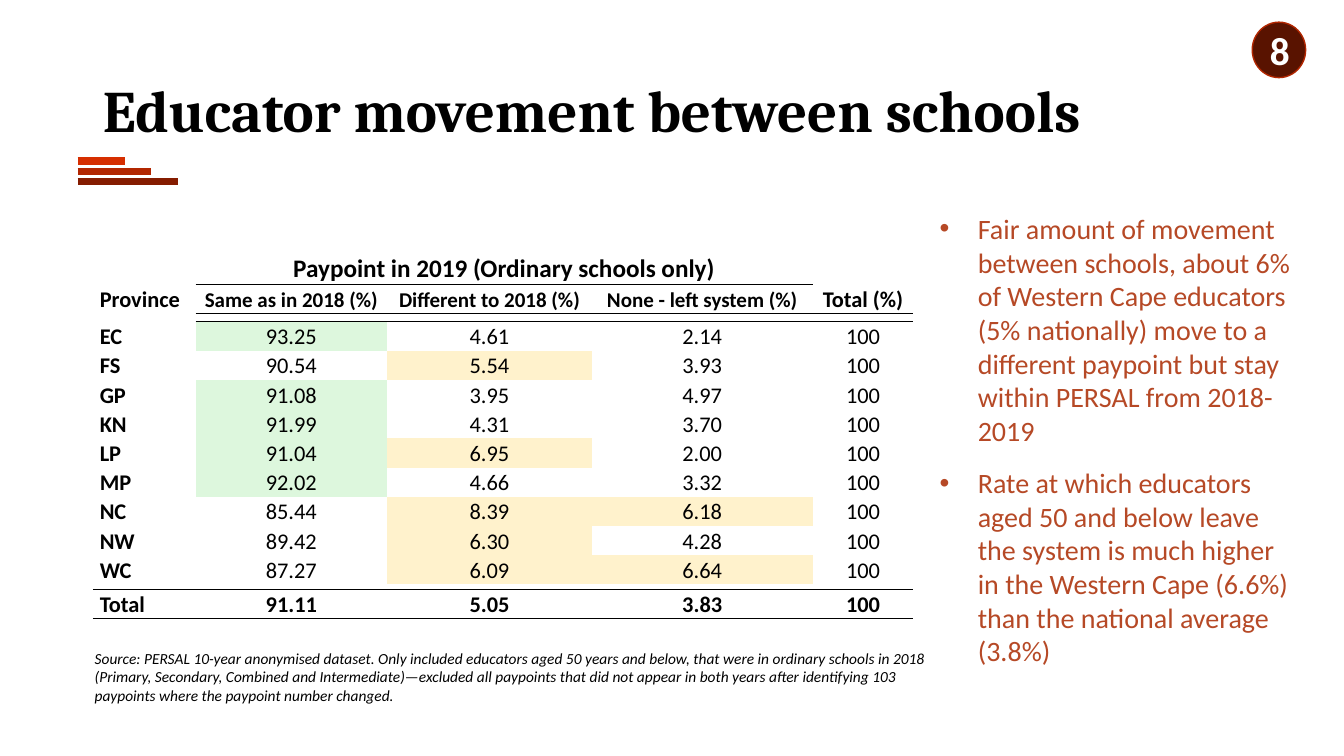
from dataclasses import dataclass

from lxml.etree import SubElement
from pptx import Presentation
from pptx.dml.color import RGBColor
from pptx.enum.shapes import MSO_CONNECTOR, MSO_SHAPE
from pptx.enum.text import MSO_ANCHOR, PP_ALIGN
from pptx.oxml.ns import qn
from pptx.util import Inches, Pt


@dataclass(frozen=True)
class Theme:
    heading_font: str = "Cambria"
    body_font: str = "Calibri"
    black: str = "000000"
    white: str = "FFFFFF"
    bullet: str = "B64926"
    badge: str = "591300"
    badge_line: str = "B22600"
    accents: tuple = ("851C00", "B22600", "D62E00")
    high: str = "DDF7DD"
    warning: str = "FFF2CC"
    title_size: int = 42
    badge_size: int = 28
    bullet_size: int = 20
    span_size: int = 18
    table_size: int = 16
    column_size: int = 15
    source_size: int = 11
    no_grid: str = "{2D5ABB26-0587-4C30-8999-92F81FD0307C}"


class SlideBuilder:
    def __init__(self, slide, theme):
        self.slide = slide
        self.theme = theme

    def add_text(self, paragraph, text, size, color, font=None, bold=False, italic=False):
        run = paragraph.add_run()
        run.text = text
        run.font.name = font or self.theme.body_font
        run.font.size = Pt(size)
        run.font.bold = bold
        run.font.italic = italic
        run.font.color.rgb = RGBColor.from_string(color)

    def title(self, text, *box):
        shape = self.slide.shapes.title
        shape.left, shape.top, shape.width, shape.height = map(Inches, box)
        shape.text_frame.vertical_anchor = MSO_ANCHOR.MIDDLE
        paragraph = shape.text_frame.paragraphs[0]
        paragraph.alignment = PP_ALIGN.LEFT
        paragraph.line_spacing = 0.9
        self.add_text(paragraph, text, self.theme.title_size, self.theme.black,
                      self.theme.heading_font, bold=True)

    def line(self, left, right, y, color, width):
        connector = self.slide.shapes.add_connector(
            MSO_CONNECTOR.STRAIGHT, Inches(left), Inches(y), Inches(right), Inches(y))
        connector.line.color.rgb = RGBColor.from_string(color)
        connector.line.width = Pt(width)
        SubElement(connector._element.spPr, qn("a:effectLst"))

    def text_frame(self, *box):
        frame = self.slide.shapes.add_textbox(*map(Inches, box)).text_frame
        frame.word_wrap = True
        return frame

    def note(self, text, *box):
        paragraph = self.text_frame(*box).paragraphs[0]
        self.add_text(paragraph, text, self.theme.source_size, self.theme.black, italic=True)

    def bullets(self, items, *box):
        frame = self.text_frame(*box)
        for index, item in enumerate(items):
            paragraph = frame.add_paragraph() if index else frame.paragraphs[0]
            paragraph.space_before = Pt(13.4 if index else 0)
            properties = paragraph._p.get_or_add_pPr()
            properties.set("marL", str(Inches(0.38)))
            properties.set("indent", str(-Inches(0.38)))
            color = SubElement(properties, qn("a:buClr"))
            SubElement(color, qn("a:srgbClr"), val=self.theme.bullet)
            SubElement(properties, qn("a:buFont"), typeface="Arial")
            SubElement(properties, qn("a:buChar"), char="•")
            self.add_text(paragraph, item, self.theme.bullet_size, self.theme.bullet)

    def badge(self, text, *box):
        shape = self.slide.shapes.add_shape(MSO_SHAPE.OVAL, *map(Inches, box))
        shape.shadow.inherit = False
        shape.fill.solid()
        shape.fill.fore_color.rgb = RGBColor.from_string(self.theme.badge)
        shape.line.color.rgb = RGBColor.from_string(self.theme.badge_line)
        shape.line.width = Pt(1)
        shape.text_frame.vertical_anchor = MSO_ANCHOR.MIDDLE
        paragraph = shape.text_frame.paragraphs[0]
        paragraph.alignment = PP_ALIGN.CENTER
        self.add_text(paragraph, text, self.theme.badge_size, self.theme.white, bold=True)

    def table(self, left, top, widths, heights):
        frame = self.slide.shapes.add_table(
            len(heights), len(widths), Inches(left), Inches(top),
            Inches(sum(widths)), Inches(sum(heights)))
        table = frame.table
        table.first_row = table.horz_banding = False
        table._tbl.tblPr.find(qn("a:tableStyleId")).text = self.theme.no_grid
        for column, width in zip(table.columns, widths):
            column.width = Inches(width)
        for row, height in zip(table.rows, heights):
            row.height = Inches(height)
        return table

    def cell(self, cell, text, size, bold, centered, fill=None, borders=""):
        cell.margin_left = cell.margin_right = Inches(0.07)
        cell.margin_top = cell.margin_bottom = 0
        cell.vertical_anchor = MSO_ANCHOR.BOTTOM
        for side in borders:
            border = SubElement(cell._tc.get_or_add_tcPr(), qn(f"a:ln{side}"), w=str(Pt(1)))
            solid = SubElement(border, qn("a:solidFill"))
            SubElement(solid, qn("a:srgbClr"), val=self.theme.black)
        if fill:
            cell.fill.solid()
            cell.fill.fore_color.rgb = RGBColor.from_string(fill)
        else:
            cell.fill.background()
        paragraph = cell.text_frame.paragraphs[0]
        if text:
            paragraph.line_spacing = 1.07
            paragraph.alignment = PP_ALIGN.CENTER if centered else PP_ALIGN.LEFT
            self.add_text(paragraph, text, size, self.theme.black, bold=bold)
        else:
            SubElement(paragraph._p, qn("a:endParaRPr"), sz="100")


HEADINGS = ("Province", "Same as in 2018 (%)", "Different to 2018 (%)",
            "None - left system (%)", "Total (%)")
PROVINCES = (
    ("EC", "93.25", "4.61", "2.14", "100"),
    ("FS", "90.54", "5.54", "3.93", "100"),
    ("GP", "91.08", "3.95", "4.97", "100"),
    ("KN", "91.99", "4.31", "3.70", "100"),
    ("LP", "91.04", "6.95", "2.00", "100"),
    ("MP", "92.02", "4.66", "3.32", "100"),
    ("NC", "85.44", "8.39", "6.18", "100"),
    ("NW", "89.42", "6.30", "4.28", "100"),
    ("WC", "87.27", "6.09", "6.64", "100"),
)
TOTALS = ("Total", "91.11", "5.05", "3.83", "100")
BLANK = ("",) * 5
BULLETS = (
    "Fair amount of movement between schools, about 6% of Western Cape educators "
    "(5% nationally) move to a different paypoint but stay within PERSAL from 2018-2019",
    "Rate at which educators aged 50 and below leave the system is much higher in the "
    "Western Cape (6.6%) than the national average (3.8%)",
)
SOURCE = (
    "Source: PERSAL 10-year anonymised dataset. Only included educators aged 50 years and "
    "below, that were in ordinary schools in 2018 (Primary, Secondary, Combined and "
    "Intermediate)—excluded all paypoints that did not appear in both years after "
    "identifying 103 paypoints where the paypoint number changed."
)


def highlight(theme, column, value):
    if column == 1 and float(value) > 91:
        return theme.high
    if column in (2, 3) and float(value) > 5:
        return theme.warning
    return None


def add_paypoint_table(builder):
    theme = builder.theme
    rows = (("", "Paypoint in 2019 (Ordinary schools only)", "", "", ""),
            HEADINGS, BLANK, *PROVINCES, BLANK, TOTALS)
    heights = (0.33, 0.29, 0.08, *[0.29] * len(PROVINCES), 0.05, 0.29)
    table = builder.table(0.92, 2.49, (1.02, 1.9, 2.03, 2.19, 1), heights)
    table.cell(0, 1).merge(table.cell(0, 3))
    last = len(rows) - 1
    borders = {0: ("", "B", "B", "B", ""), 1: ("", "TB", "TB", "TB", "B"),
               2: ("", "T", "T", "T", "T"), last - 1: ("B",) * 5, last: ("TB",) * 5}
    for row, values in enumerate(rows):
        is_province = values in PROVINCES
        for column, value in enumerate(values):
            size = theme.table_size
            if row == 0:
                size = theme.span_size
            elif row == 1 and column in (1, 2, 3):
                size = theme.column_size
            builder.cell(table.cell(row, column), value, size,
                         bold=not is_province or column == 0, centered=column > 0,
                         fill=highlight(theme, column, value) if is_province else None,
                         borders=borders.get(row, BLANK)[column])


def main():
    presentation = Presentation()
    presentation.slide_width, presentation.slide_height = Inches(13.33), Inches(7.5)
    slide = presentation.slides.add_slide(presentation.slide_layouts[5])
    builder = SlideBuilder(slide, Theme())
    for index, (color, right) in enumerate(zip(builder.theme.accents, (1.77, 1.5, 1.24))):
        builder.line(0.77, right, 1.8 - 0.1 * index, color, 5.5)
    builder.title("Educator movement between schools", 0.92, 0.4, 11.5, 1.45)
    builder.bullets(BULLETS, 9.22, 2.05, 3.73, 4.33)
    builder.note(SOURCE, 0.84, 6.39, 8.59, 0.74)
    add_paypoint_table(builder)
    builder.badge("8", 12.42, 0.22, 0.53, 0.55)
    presentation.save("out.pptx")


if __name__ == "__main__":
    main()
